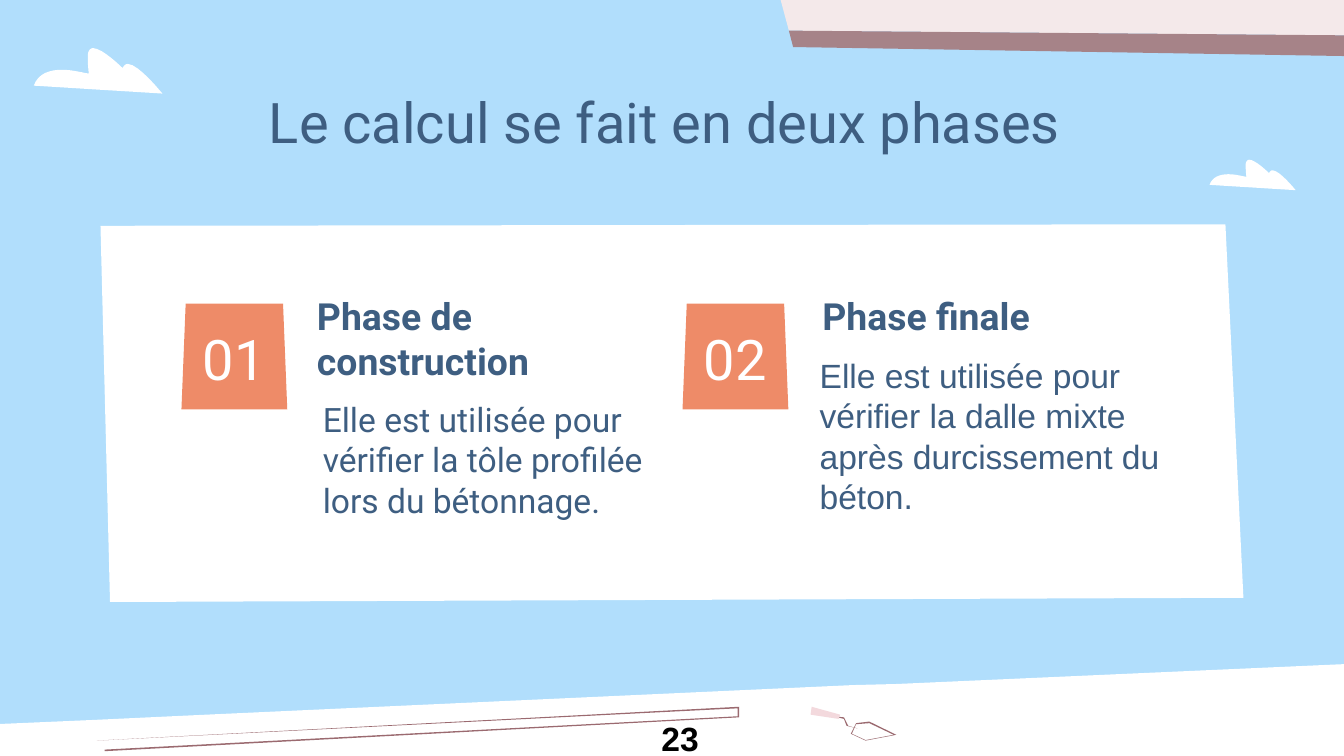
from pptx import Presentation
from pptx.dml.color import RGBColor
from pptx.enum.shapes import MSO_SHAPE
from pptx.enum.text import MSO_ANCHOR, MSO_AUTO_SIZE, PP_ALIGN
from pptx.util import Cm, Pt
from lxml import etree

TOP, MIDDLE = MSO_ANCHOR.TOP, MSO_ANCHOR.MIDDLE
LEFT, CENTER = PP_ALIGN.LEFT, PP_ALIGN.CENTER
FIXED = MSO_AUTO_SIZE.NONE
TRAPEZOID = MSO_SHAPE.TRAPEZOID

SKY = RGBColor(0xB1, 0xDE, 0xFC)
WHITE = RGBColor(0xFF, 0xFF, 0xFF)
BLACK = RGBColor(0, 0, 0)
BLUE = RGBColor(0x3E, 0x5E, 0x81)
ORANGE = RGBColor(0xEE, 0x8B, 0x68)
BROWN = RGBColor(0x9B, 0x6A, 0x70)
PINK = RGBColor(0xF3, 0xD9, 0xDD)
PALE = RGBColor(0xF4, 0xE9, 0xEA)
MAUVE = RGBColor(0xA6, 0x83, 0x88)

deck = Presentation()
deck.slide_width, deck.slide_height = Cm(25.4), Cm(14.29)
slide = deck.slides.add_slide(deck.slide_layouts.get_by_name("Comparison"))
shapes = slide.shapes
slide.background.fill.solid()
slide.background.fill.fore_color.rgb = SKY


def draw(color, *rings):
    """Draw a filled outline; any further ring cuts a hole."""
    rings = [[(Cm(x), Cm(y)) for x, y in ring] for ring in rings]
    pen = shapes.build_freeform(*rings[0][0])
    pen.add_line_segments(rings[0][1:])
    for ring in rings[1:]:
        pen.move_to(*ring[0])
        pen.add_line_segments(ring[1:])
    form = pen.convert_to_shape()
    form.shadow.inherit = False
    form.fill.solid()
    form.fill.fore_color.rgb = color
    form.line.fill.background()


def write(shape, text, size, color, align=LEFT, font="Roboto", bold=False,
          anchor=TOP, inset=(0, 0)):
    """Fill a shape with one formatted paragraph."""
    frame = shape.text_frame
    side, edge = (Cm(gap) for gap in inset)
    form = {"word_wrap": True, "auto_size": FIXED, "vertical_anchor": anchor,
            "margin_left": side, "margin_right": side,
            "margin_top": edge, "margin_bottom": edge}
    for name, value in form.items():
        setattr(frame, name, value)
    frame.text = text
    para = frame.paragraphs[0]
    para.alignment = align
    para.space_before = Pt(0)
    run = para.runs[0].font
    for name, value in {"size": Pt(size), "name": font, "bold": bold}.items():
        setattr(run, name, value)
    run.color.rgb = color


# Ground
draw(WHITE, [(25.5, 12.55), (16.94, 12.93), (16.13, 12.95), (3.89, 13.51),
             (1.75, 13.61), (-0.1, 13.69), (-0.1, 15.01), (25.5, 15.01)])

# Trowel: neck, blade, handle
draw(BROWN, [(15.75, 13.54), (15.95, 13.59), (16, 13.72), (16.21, 13.77),
             (16.03, 13.72), (15.95, 13.56)])
draw(BROWN,
     [(16.43, 13.64), (16.18, 13.67), (16.08, 13.87), (16.36, 14), (16.94, 13.89)],
     [(16.43, 13.67), (16.89, 13.89), (16.36, 13.99), (16.1, 13.87), (16.18, 13.69)])
draw(PINK, [(15.34, 13.36), (15.32, 13.51), (15.85, 13.59), (15.88, 13.51)])

# Plank
draw(BROWN, [(13.97, 13.36), (1.83, 14), (13.94, 13.39), (13.94, 13.54),
             (1.98, 14.17), (1.98, 14.2), (13.97, 13.56)])

# Roof and its edge
draw(PALE, [(30.28, -0.61), (14.63, -0.46), (14.91, 0.58), (30.28, 0.71)])
draw(MAUVE, [(30.28, 0.71), (14.91, 0.58), (14.99, 0.89), (30.28, 1.14)])

# Clouds: one chain of cubic curves, placed at two scales
curves = [
    ((1.07, 0), (1.02, 0.05), (1.02, 0.15)),
    ((1.02, 0.38), (1.04, 0.46), (1.04, 0.48)),
    ((0.97, 0.48), (0.76, 0.41), (0.53, 0.41)),
    ((0.3, 0.41), (0.08, 0.48), (0, 0.71)),
    ((0, 0.71), (2.43, 0.86), (2.43, 0.86)),
    ((2.43, 0.86), (1.98, 0.3), (1.78, 0.3)),
    ((1.73, 0.3), (1.7, 0.33), (1.68, 0.38)),
    ((1.68, 0.38), (1.3, 0), (1.12, 0)),
]
cloud = [(1.12, 0)]
STEPS = 8
for one, two, end in curves:
    start = cloud[-1]
    for step in range(1, STEPS + 1):
        t = step / STEPS
        u = 1 - t
        cloud.append(tuple(
            u**3 * a + 3 * u * u * t * b + 3 * u * t * t * c + t**3 * d
            for a, b, c, d in zip(start, one, two, end)))
for left, top, scale in [(22.86, 3.02, 0.67), (0.64, 0.91, 1)]:
    draw(WHITE, [(left + x * scale, top + y * scale) for x, y in cloud])

# Panel
draw(WHITE, [(23.5, 11.3), (2.08, 11.38), (1.9, 4.27), (23.16, 4.24)])

# Title, phase names and phase texts
HEAD = {"size": 20, "bold": True}
texts = [
    ("Le calcul se fait en deux phases ", (2.08, 1.65, 21.23, 1.19),
     {"size": 30, "align": CENTER}),
    ("Phase de construction", (5.99, 5.54, 6.45, 0.94), HEAD),
    ("Elle est utilisée pour vérifier la tôle profilée lors du bétonnage.",
     (6.1, 7.54, 6.45, 2.59), {"size": 18}),
    ("Phase finale", (15.54, 5.54, 6.45, 0.94), HEAD),
    ("Elle est utilisée pour vérifier la dalle mixte après durcissement du béton.",
     (15.49, 6.71, 6.45, 3.53), {"size": 18, "font": "Arial"}),
]
for holder, (text, box, style) in zip(list(slide.placeholders), texts):
    for name, value in zip(("left", "top", "width", "height"), box):
        setattr(holder, name, Cm(value))
    write(holder, text, color=BLUE, **style)
    # No bullet or indent, and in front of the panel
    props = holder.text_frame.paragraphs[0]._p.get_or_add_pPr()
    props.set("marL", "0")
    props.set("indent", "0")
    etree.SubElement(props, props.tag.replace("pPr", "buNone"))
    holder.element.getparent().append(holder.element)

# Number tiles
for label, left in [("01", 3.43), ("02", 12.9)]:
    tile = shapes.add_shape(TRAPEZOID, Cm(left), Cm(5.74), Cm(2), Cm(2))
    tile.adjustments[0] = 0.04
    tile.shadow.inherit = False
    tile.fill.solid()
    tile.fill.fore_color.rgb = ORANGE
    tile.line.fill.background()
    write(tile, label, 30, WHITE, CENTER, anchor=MIDDLE, inset=(0.25, 0.25))

# Page number
page = shapes.add_textbox(Cm(11.79), Cm(13.44), Cm(2.13), Cm(1.02))
write(page, "23", 18, BLACK, CENTER, "Arial", True, inset=(0.25, 0.13))

deck.save("out.pptx")
